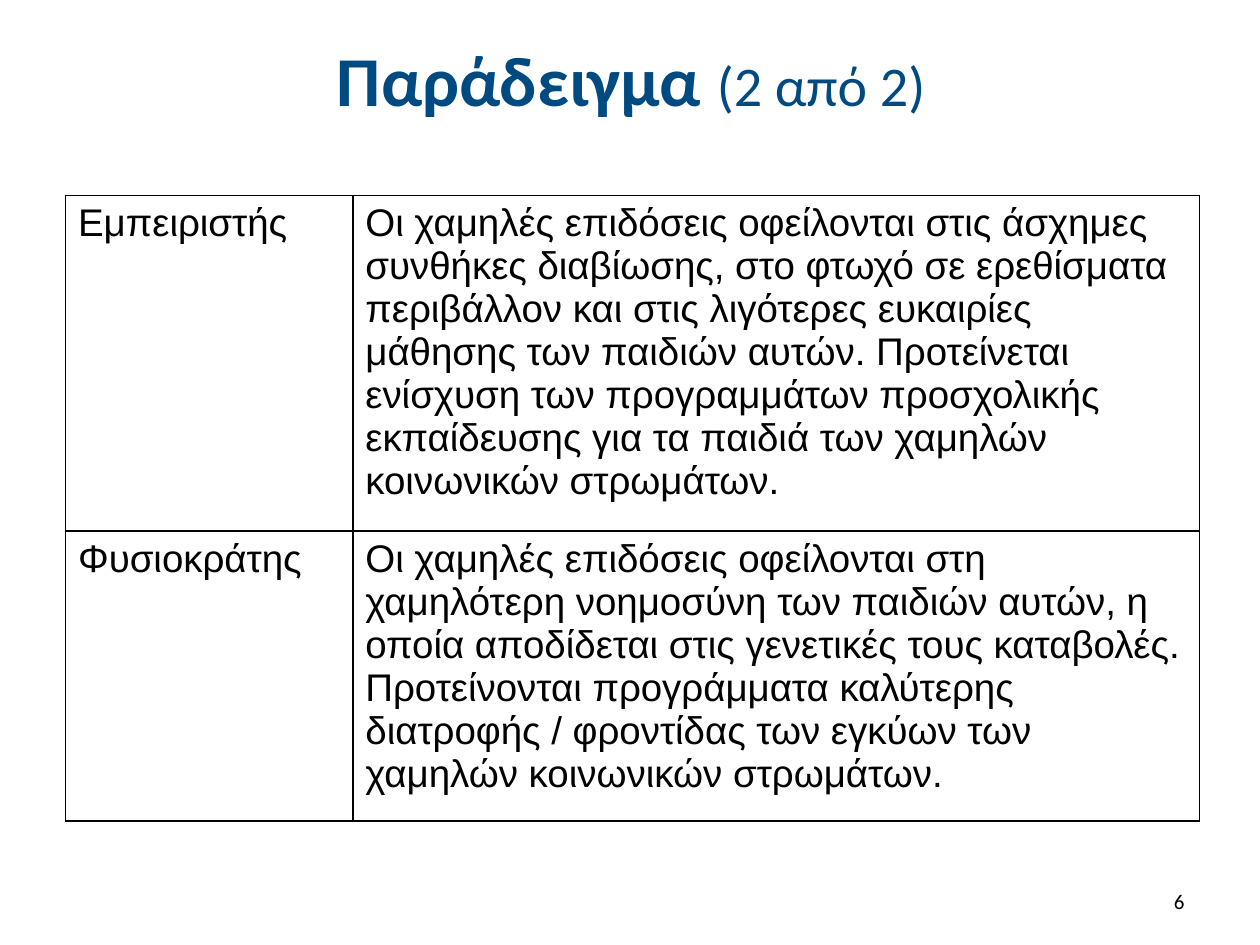
import pptx
import pptx.dml.color
import pptx.enum.text
import pptx.oxml
import pptx.oxml.ns
import pptx.util
from pptx.util import Inches

ALIGN = pptx.enum.text.PP_ALIGN
ANCHOR = pptx.enum.text.MSO_ANCHOR
BLACK = "000000"
TITLE_BLUE = "004A82"

ROWS = [
    ("Εμπειριστής",
     "Οι χαμηλές επιδόσεις οφείλονται στις άσχημες συνθήκες διαβίωσης, "
     "στο φτωχό σε ερεθίσματα περιβάλλον και στις λιγότερες ευκαιρίες "
     "μάθησης των παιδιών αυτών. Προτείνεται ενίσχυση των προγραμμάτων "
     "προσχολικής εκπαίδευσης για τα παιδιά των χαμηλών κοινωνικών "
     "στρωμάτων."),
    ("Φυσιοκράτης",
     "Οι χαμηλές επιδόσεις οφείλονται στη χαμηλότερη νοημοσύνη των παιδιών "
     "αυτών, η οποία αποδίδεται στις γενετικές τους καταβολές. Προτείνονται "
     "προγράμματα καλύτερης διατροφής / φροντίδας των εγκύων των χαμηλών "
     "κοινωνικών στρωμάτων."),
]
COLUMN_WIDTHS = [2.28, 6.72]
ROW_HEIGHTS = [2.49, 2.15]


def color(value):
    return pptx.dml.color.RGBColor.from_string(value)


def style_font(font, name, size, fill, bold=False):
    font.name = name
    font.size = pptx.util.Pt(size)
    font.bold = bold
    font.color.rgb = color(fill)


def add_text(page, left, top, width, height, spans, align, fill):
    """Add one centred-anchor line made of (text, size, bold) spans."""
    box = page.shapes.add_textbox(
        Inches(left), Inches(top), Inches(width), Inches(height))
    frame = box.text_frame
    frame.word_wrap = True
    frame.vertical_anchor = ANCHOR.MIDDLE
    para = frame.paragraphs[0]
    para.alignment = align
    for text, size, bold in spans:
        span = para.add_run()
        span.text = text
        style_font(span.font, "Calibri", size, fill, bold)


def set_borders(cell, fill, points):
    properties = cell._tc.get_or_add_tcPr()
    for index, side in enumerate(("lnL", "lnR", "lnT", "lnB")):
        line = pptx.oxml.parse_xml(
            f'<a:{side} {pptx.oxml.ns.nsdecls("a")} w="{pptx.util.Pt(points)}">'
            f'<a:solidFill><a:srgbClr val="{fill}"/></a:solidFill></a:{side}>')
        properties.insert(index, line)


def add_comparison(page, left, top):
    frame = page.shapes.add_table(
        len(ROWS), len(COLUMN_WIDTHS), Inches(left), Inches(top),
        Inches(sum(COLUMN_WIDTHS)), Inches(sum(ROW_HEIGHTS)))
    table = frame.table
    table.first_row = False
    table.horz_banding = False
    for column, width in zip(table.columns, COLUMN_WIDTHS):
        column.width = Inches(width)
    for row, height, texts in zip(table.rows, ROW_HEIGHTS, ROWS):
        row.height = Inches(height)
        for cell, text in zip(row.cells, texts):
            cell.text = text
            style_font(cell.text_frame.paragraphs[0].runs[0].font,
                       "Arial", 22, BLACK)
            cell.fill.background()
            set_borders(cell, BLACK, 1)


def main():
    deck = pptx.Presentation()
    deck.slide_width, deck.slide_height = Inches(10), Inches(7.5)
    page = deck.slides.add_slide(deck.slide_layouts[6])

    # Title
    add_text(page, 0.51, 0.13, 9, 0.99,
             [("Παράδειγμα ", 40, True), ("(2 από 2)", 32, False)],
             ALIGN.CENTER, TITLE_BLUE)

    # Two views side by side with their explanations
    add_comparison(page, 0.52, 1.55)

    # Page number
    add_text(page, 7.17, 6.95, 2.33, 0.4, [("6", 12, False)],
             ALIGN.RIGHT, BLACK)

    deck.save("out.pptx")


if __name__ == "__main__":
    main()
